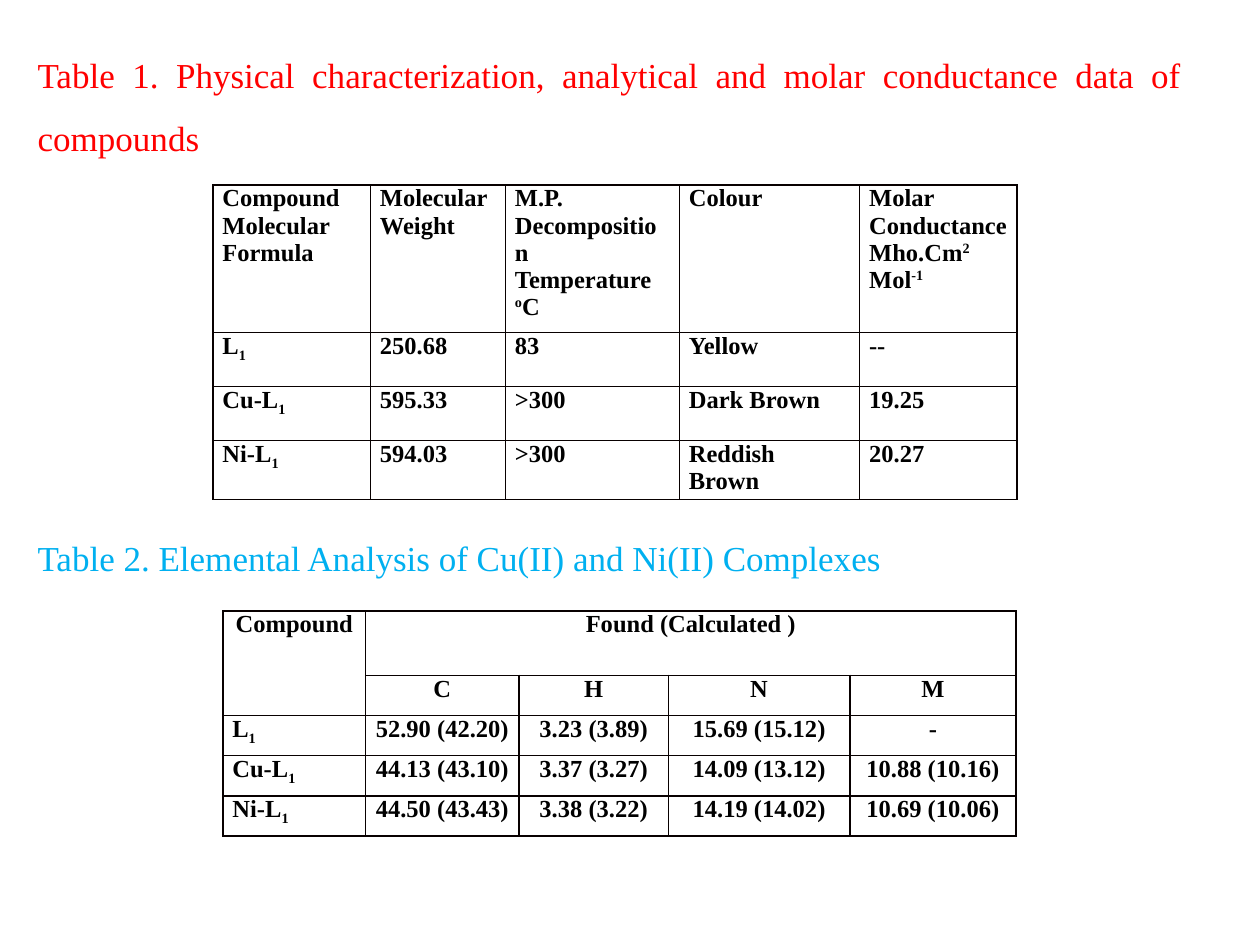
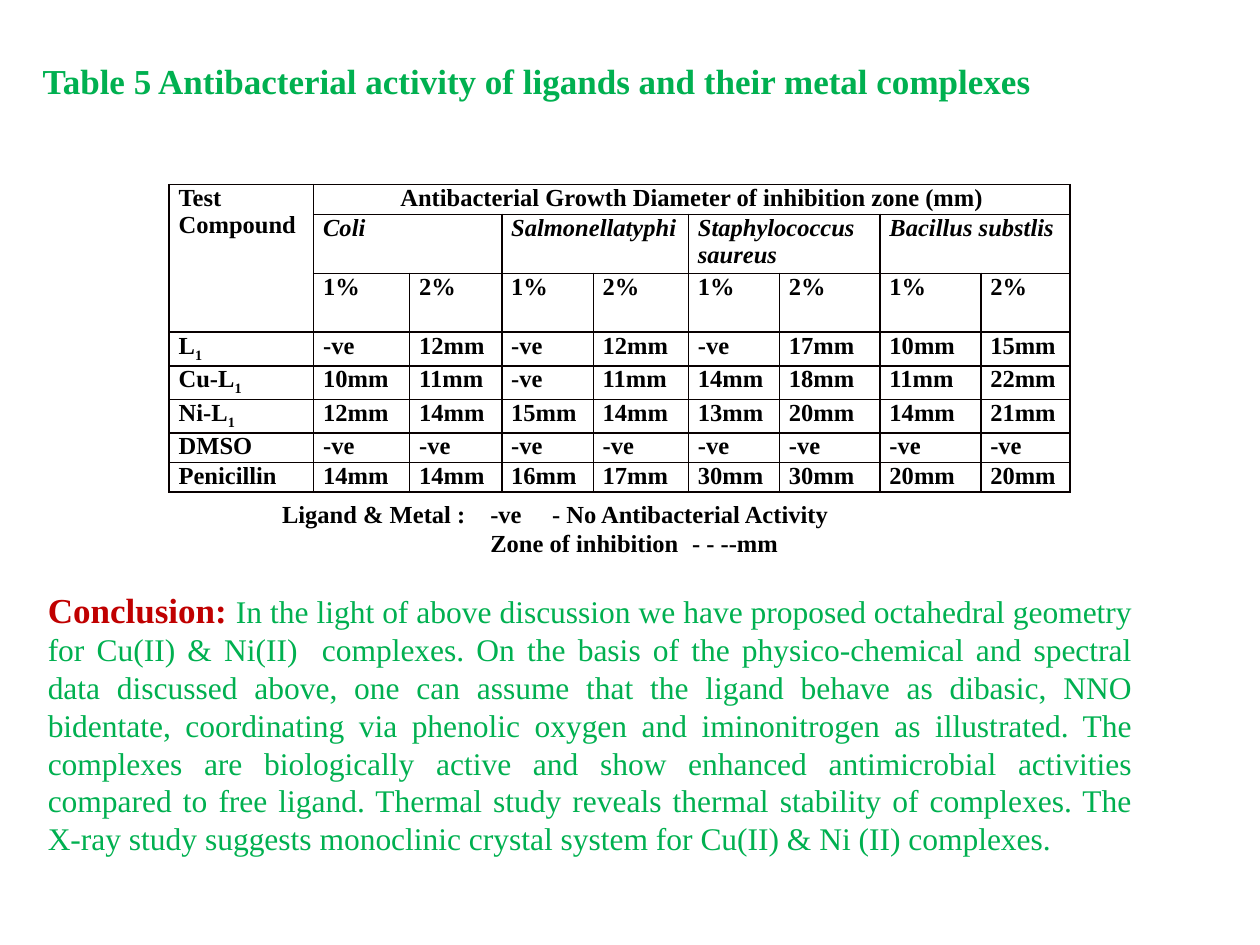
"""Build two slides of compound data tables, with captions, a legend and a conclusion."""
import itertools

import lxml.etree
import pptx
import pptx.dml.color
import pptx.enum.text
import pptx.oxml.ns
import pptx.util

Pt = pptx.util.Pt
RGB = pptx.dml.color.RGBColor
ALIGN = pptx.enum.text.PP_ALIGN
qn = pptx.oxml.ns.qn

FONT = "Times New Roman"
BLACK = RGB(0x00, 0x00, 0x00)
RED = RGB(0xFF, 0x00, 0x00)
DARK_RED = RGB(0xC0, 0x00, 0x00)
SKY = RGB(0x00, 0xB0, 0xF0)
GREEN = RGB(0x00, 0xB0, 0x50)
BORDER = RGB(0x08, 0x00, 0x00)
CAPTION_SIZE, BODY_SIZE, TABLE_SIZE = 20, 18, 14
CELL_MARGIN = 5.4
SUPER, SUB = 30, -25

LEFT, UP = "<", "^"
LIGAND, COPPER, NICKEL = ([(name, 0), ("1", SUB)] for name in ("L", "Cu-L", "Ni-L"))

PHYSICAL = {
    "place": (121.7, 105.8),
    "columns": (90, 77.2, 99.4, 103, 90),
    "rows": (77.7, 30.9, 30.9, 30.9),
    "centred": lambda row, column: False,
    "cells": [
        ["Compound Molecular Formula", "Molecular Weight",
         [("M.P. Decomposition Temperature ", 0), ("o", SUPER), ("C", 0)], "Colour",
         [("Molar ConductanceMho.Cm", 0), ("2 ", SUPER), ("Mol", 0), ("-1", SUPER)]],
        [LIGAND, "250.68", "83", "Yellow", "--"],
        [COPPER, "595.33", ">300", "Dark Brown", "19.25"],
        [NICKEL, "594.03", ">300", "Reddish Brown", "20.27"],
    ],
}
ELEMENTAL = {
    "place": (127.4, 349.2),
    "columns": (81.6, 87.6, 85.4, 103.7, 95),
    "rows": (36.7, 23, 23, 23, 23),
    "centred": lambda row, column: row < 2 or column > 0,
    "cells": [
        ["Compound", "Found (Calculated )", LEFT, LEFT, LEFT],
        [UP, "C", "H", "N", "M"],
        [LIGAND, "52.90 (42.20)", "3.23 (3.89)", "15.69 (15.12)", "-"],
        [COPPER, "44.13 (43.10)", "3.37 (3.27)", "14.09 (13.12)", "10.88 (10.16)"],
        [NICKEL, "44.50 (43.43)", "3.38 (3.22)", "14.19 (14.02)", "10.69 (10.06)"],
    ],
}
ANTIBACTERIAL = {
    "place": (96.7, 105.5),
    "columns": (82.6, 54.9, 52.6, 52.3, 54.4, 52, 57.5, 57.6, 51),
    "rows": (17, 33.7, 33.7, 19.2, 19.2, 19.2, 16.7, 16.7),
    "centred": lambda row, column: (row, column) == (0, 1),
    "italic_row": 1,
    "cells": [
        ["Test Compound", "Antibacterial Growth Diameter of inhibition zone (mm)"] + [LEFT] * 7,
        [UP, "Coli", LEFT, "Salmonellatyphi", LEFT,
         "Staphylococcus saureus", LEFT, "Bacillus substlis", LEFT],
        [UP] + ["1%", "2%"] * 4,
        [LIGAND, "-ve", "12mm", "-ve", "12mm", "-ve", "17mm", "10mm", "15mm"],
        [COPPER, "10mm", "11mm", "-ve", "11mm", "14mm", "18mm", "11mm", "22mm"],
        [NICKEL, "12mm", "14mm", "15mm", "14mm", "13mm", "20mm", "14mm", "21mm"],
        ["DMSO"] + ["-ve"] * 8,
        ["Penicillin", "14mm", "14mm", "16mm", "17mm", "30mm", "30mm", "20mm", "20mm"],
    ],
}

PHYSICAL_CAPTION = ("Table 1. Physical characterization, analytical and molar "
                    "conductance data of compounds")
ELEMENTAL_CAPTION = "Table 2. Elemental Analysis of Cu(II) and Ni(II) Complexes"
ANTIBACTERIAL_CAPTION = "Table 5 Antibacterial activity of ligands and their metal complexes"
LEGEND = ["Ligand & Metal :\t-ve\t- No Antibacterial Activity",
          "\tZone of inhibition\t- - --mm"]
LEGEND_TABS = (119, 154.3, 234.3)
CONCLUSION_HEAD = "Conclusion: "
CONCLUSION = (
    "In the light of above discussion we have proposed octahedral geometry for Cu(II) & "
    "Ni(II)  complexes. On the basis of the physico-chemical and spectral data discussed "
    "above, one can assume that the ligand behave as dibasic, NNO bidentate, coordinating "
    "via phenolic oxygen and iminonitrogen as illustrated. The complexes are biologically "
    "active and show enhanced antimicrobial activities compared to free ligand. Thermal "
    "study reveals thermal stability of complexes. The X-ray study suggests monoclinic "
    "crystal system for Cu(II) & Ni (II) complexes.")


def add_span(para, text, size, color, bold=False, italic=False, baseline=0):
    span = para.add_run()
    span.text = text
    span.font.name = FONT
    span.font.size = Pt(size)
    span.font.bold = bold
    span.font.italic = italic
    span.font.color.rgb = color
    if baseline:
        span._r.get_or_add_rPr().set("baseline", str(baseline * 1000))


def add_box(slide, left, top, width, height):
    box = slide.shapes.add_textbox(Pt(left), Pt(top), Pt(width), Pt(height))
    box.text_frame.word_wrap = True
    return box.text_frame


def add_caption(slide, place, text, color, bold=False, align=ALIGN.LEFT, spacing=1.0):
    para = add_box(slide, *place).paragraphs[0]
    para.alignment = align
    para.line_spacing = spacing
    para.space_before = Pt(4)
    add_span(para, text, CAPTION_SIZE, color, bold)


def draw_borders(cell):
    properties = cell._tc.get_or_add_tcPr()
    for position, side in enumerate(("lnL", "lnR", "lnT", "lnB")):
        line = lxml.etree.Element(qn(f"a:{side}"), w=str(Pt(1)))
        fill = lxml.etree.SubElement(line, qn("a:solidFill"))
        lxml.etree.SubElement(fill, qn("a:srgbClr"), val=str(BORDER))
        properties.insert(position, line)


def run_length(marks, mark):
    return len(list(itertools.takewhile(lambda item: item == mark, marks)))


def add_data_table(slide, data):
    cells, columns, rows = data["cells"], data["columns"], data["rows"]
    table = slide.shapes.add_table(
        len(rows), len(columns), *map(Pt, data["place"]), Pt(sum(columns)), Pt(sum(rows))).table
    table.first_row = table.horz_banding = False
    for column, width in zip(table.columns, columns):
        column.width = Pt(width)
    for row, height in zip(table.rows, rows):
        row.height = Pt(height)
    for r, c in itertools.product(range(len(rows)), range(len(columns))):
        cell, content = table.cell(r, c), cells[r][c]
        cell.fill.background()
        draw_borders(cell)
        cell.margin_left = cell.margin_right = Pt(CELL_MARGIN)
        cell.margin_top = cell.margin_bottom = 0
        if content in (LEFT, UP):
            continue
        across = run_length(cells[r][c + 1:], LEFT)
        down = run_length([line[c] for line in cells[r + 1:]], UP)
        if across or down:
            cell.merge(table.cell(r + down, c + across))
        para = cell.text_frame.paragraphs[0]
        para.alignment = ALIGN.CENTER if data["centred"](r, c) else ALIGN.LEFT
        for text, baseline in [(content, 0)] if isinstance(content, str) else content:
            add_span(para, text, TABLE_SIZE, BLACK, True, r == data.get("italic_row"), baseline)


def add_legend(slide):
    frame = add_box(slide, 154.1, 281.5, 400, 41)
    for index, text in enumerate(LEGEND):
        para = frame.add_paragraph() if index else frame.paragraphs[0]
        tabs = lxml.etree.SubElement(para._p.get_or_add_pPr(), qn("a:tabLst"))
        for stop in LEGEND_TABS:
            lxml.etree.SubElement(tabs, qn("a:tab"), pos=str(Pt(stop)), algn="l")
        add_span(para, text, TABLE_SIZE, BLACK, True)


def add_conclusion(slide):
    para = add_box(slide, 20.2, 332.6, 634.3, 162).paragraphs[0]
    para.alignment = ALIGN.JUSTIFY
    add_span(para, CONCLUSION_HEAD, CAPTION_SIZE, DARK_RED, True)
    add_span(para, CONCLUSION, BODY_SIZE, GREEN)


def main():
    deck = pptx.Presentation()
    deck.slide_width, deck.slide_height = Pt(720), Pt(540)
    blank = deck.slide_layouts[6]

    analysis = deck.slides.add_slide(blank)
    add_caption(analysis, (14.4, 15.1, 668, 84), PHYSICAL_CAPTION, RED,
                align=ALIGN.JUSTIFY, spacing=1.5)
    add_data_table(analysis, PHYSICAL)
    add_caption(analysis, (14.4, 291, 668, 48), ELEMENTAL_CAPTION, SKY, spacing=1.5)
    add_data_table(analysis, ELEMENTAL)

    activity = deck.slides.add_slide(blank)
    add_caption(activity, (17.3, 30.2, 666.7, 36), ANTIBACTERIAL_CAPTION, GREEN, bold=True)
    add_conclusion(activity)
    add_data_table(activity, ANTIBACTERIAL)
    add_legend(activity)

    deck.save("out.pptx")


if __name__ == "__main__":
    main()
